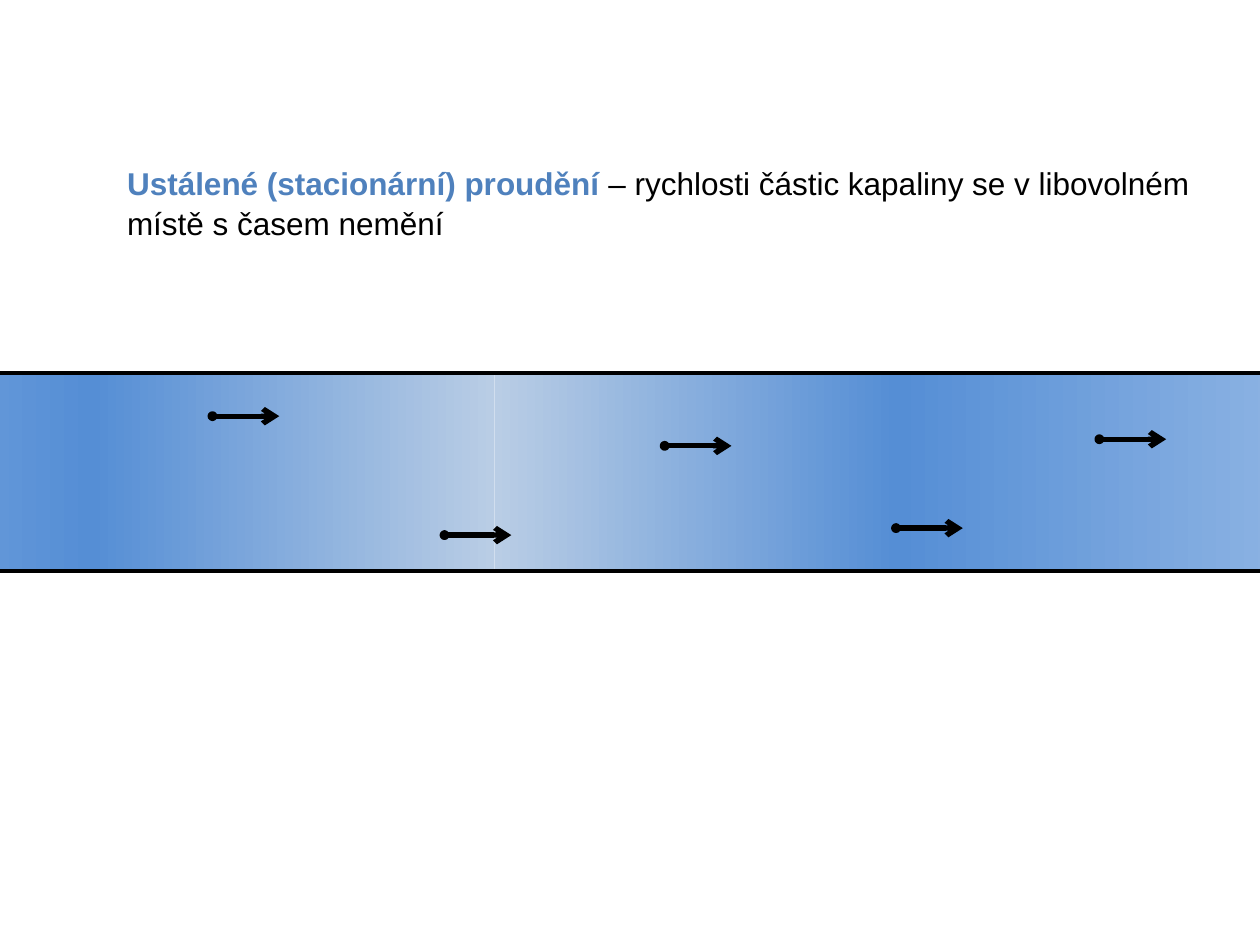
from copy import deepcopy

from pptx import Presentation
from pptx.dml.color import RGBColor
from pptx.enum import shapes, text
from pptx.oxml.ns import qn
from pptx.util import Pt
from lxml import etree

BLACK = RGBColor(0x00, 0x00, 0x00)
TERM_BLUE = RGBColor(0x4F, 0x81, 0xBD)
WATER = [
    (0, RGBColor(0xB9, 0xCD, 0xE5)),
    (0.5, RGBColor(0x55, 0x8E, 0xD5)),
    (1, RGBColor(0x8E, 0xB4, 0xE3)),
]


def add_text(paragraph, content, color=BLACK, bold=False, size=18, font="Arial"):
    run = paragraph.add_run()
    run.text = content
    run.font.name = font
    run.font.size = Pt(size)
    run.font.bold = bold
    run.font.color.rgb = color


presentation = Presentation()
presentation.slide_width, presentation.slide_height = Pt(720), Pt(540)
slide = presentation.slides.add_slide(presentation.slide_layouts[6])

# Water: two mirrored gradient halves meeting at one edge
pipe_top, pipe_height = 213.1, 113
half_width, middle = 460, 282.5
water = slide.shapes.add_group_shape()
for left, mirrored in ((middle - half_width, True), (middle, False)):
    half = water.shapes.add_shape(
        shapes.MSO_SHAPE.RECTANGLE,
        Pt(left), Pt(pipe_top), Pt(half_width), Pt(pipe_height))
    half.shadow.inherit = False
    half.line.fill.background()
    half.fill.gradient()
    half.fill.gradient_angle = 0
    first_stop = half.fill.gradient_stops[0]._gs
    first_stop.addnext(deepcopy(first_stop))
    for stop, (position, color) in zip(half.fill.gradient_stops, WATER):
        stop.position = position
        stop.color.rgb = color
    if mirrored:
        half._element.spPr.find(qn("a:xfrm")).set("flipH", "1")

# Pipe walls, running past both slide edges
pipe = slide.shapes.add_shape(
    shapes.MSO_SHAPE.RECTANGLE,
    Pt(-65.5), Pt(pipe_top), Pt(850.5), Pt(pipe_height))
pipe.shadow.inherit = False
pipe.fill.background()
pipe.line.color.rgb = BLACK
pipe.line.width = Pt(2.25)

# Definition
definition = slide.shapes.add_textbox(Pt(65.5), Pt(88.6), Pt(627), Pt(51))
frame = definition.text_frame
frame.word_wrap = False
frame.auto_size = text.MSO_AUTO_SIZE.SHAPE_TO_FIT_TEXT
paragraph = frame.paragraphs[0]
paragraph.line_spacing = 1.06
add_text(paragraph, "Ustálené (stacionární) proudění ", color=TERM_BLUE, bold=True)
add_text(paragraph, "– rychlosti částic kapaliny se v libovolném")
paragraph.add_line_break()
add_text(paragraph, "místě s časem nemění")

# Particles with equal velocity arrows
arrow_length, dot_size = 40, 3.6
for x, y in ((119.6, 237.8), (252.2, 305.8), (378, 254.8), (510.2, 301.8), (626.4, 251)):
    particle = slide.shapes.add_group_shape()
    arrow = particle.shapes.add_connector(
        shapes.MSO_CONNECTOR.STRAIGHT, Pt(x), Pt(y), Pt(x + arrow_length), Pt(y))
    arrow.line.color.rgb = BLACK
    arrow.line.width = Pt(3)
    etree.SubElement(arrow.line._get_or_add_ln(), qn("a:tailEnd"), type="arrow")
    etree.SubElement(arrow._element.spPr, qn("a:effectLst"))

    dot = particle.shapes.add_shape(
        shapes.MSO_SHAPE.OVAL,
        Pt(x), Pt(y - dot_size / 2), Pt(dot_size), Pt(dot_size))
    dot.shadow.inherit = False
    dot.fill.solid()
    dot.fill.fore_color.rgb = BLACK
    dot.line.color.rgb = BLACK
    dot.line.width = Pt(2)

presentation.save("out.pptx")
